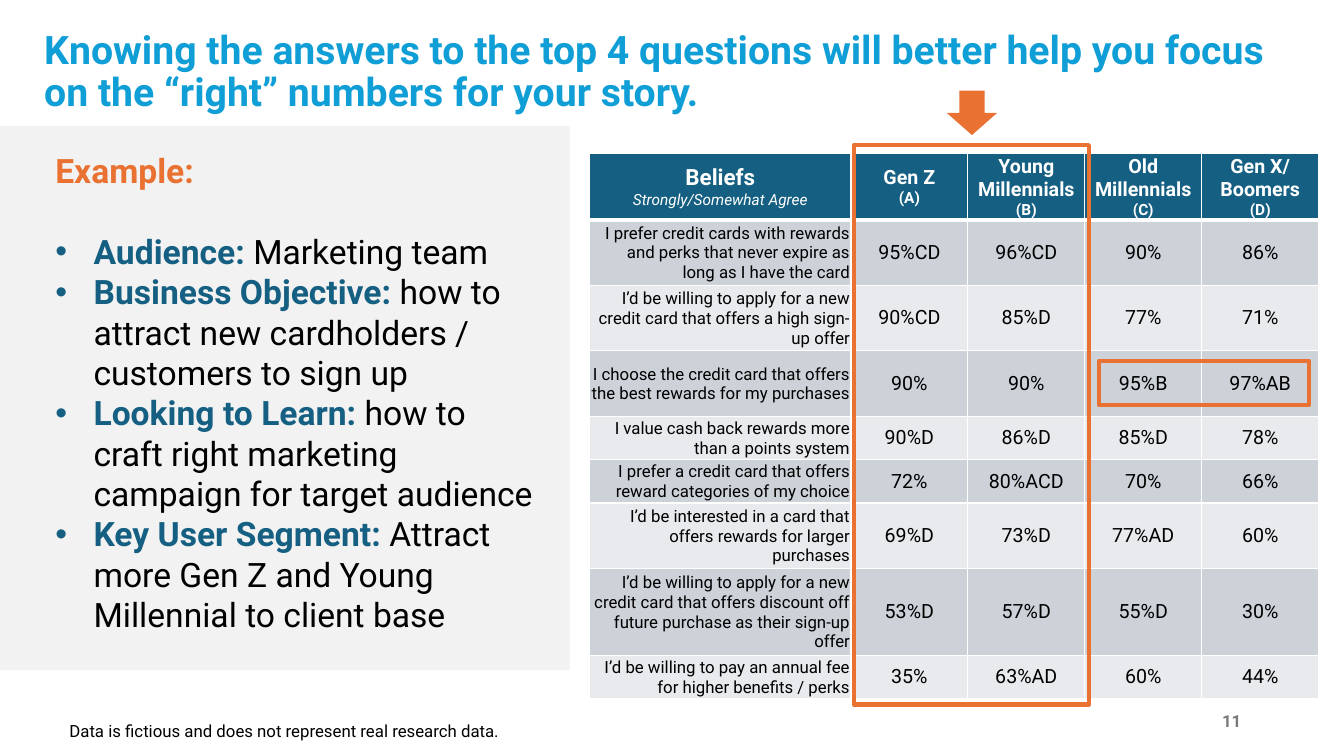
from lxml import etree
from pptx import Presentation
from pptx.dml.color import RGBColor
from pptx.enum.shapes import MSO_SHAPE as SHAPE
from pptx.enum.text import MSO_ANCHOR as ANCHOR, PP_ALIGN as ALIGN
from pptx.oxml.ns import qn
from pptx.util import Inches, Pt

FONT = "Roboto"
BLUE, ORANGE, BLACK, WHITE = "156082", "E97132", "000000", "FFFFFF"
BANDS = ("CCD2D8", "E8EAED")

TITLE = ("Knowing the answers to the top 4 questions will better help you "
         "focus on the “right” numbers for your story.")
FOOTNOTE = "Data is fictious and does not represent real research data."
PAGE = "11"
BRIEF = [
    ("Audience: ", "Marketing team"),
    ("Business Objective: ",
     "how to attract new cardholders / customers to sign up"),
    ("Looking to Learn: ",
     "how to craft right marketing campaign for target audience"),
    ("Key User Segment: ",
     "Attract more Gen Z and Young Millennial to client base"),
]
BELIEFS_HEAD = ("Beliefs", "Strongly/Somewhat Agree")
SEGMENTS = [("Gen Z", "(A)"), ("Young Millennials", "(B)"),
            ("Old Millennials", "(C)"), ("Gen X/ Boomers", "(D)")]
# row height, belief, share of each segment
BELIEFS = [
    (0.65, "I prefer credit cards with rewards and perks that never expire "
           "as long as I have the card", "95%CD", "96%CD", "90%", "86%"),
    (0.65, "I’d be willing to apply for a new credit card that offers a high "
           "sign-up offer", "90%CD", "85%D", "77%", "71%"),
    (0.65, "I choose the credit card that offers the best rewards for my "
           "purchases", "90%", "90%", "95%B", "97%AB"),
    (0.43, "I value cash back rewards more than a points system",
     "90%D", "86%D", "85%D", "78%"),
    (0.43, "I prefer a credit card that offers reward categories of my "
           "choice", "72%", "80%ACD", "70%", "66%"),
    (0.65, "I’d be interested in a card that offers rewards for larger "
           "purchases", "69%D", "73%D", "77%AD", "60%"),
    (0.86, "I’d be willing to apply for a new credit card that offers "
           "discount off future purchase as their sign-up offer",
     "53%D", "57%D", "55%D", "30%"),
    (0.43, "I’d be willing to pay an annual fee for higher benefits / perks",
     "35%", "63%AD", "60%", "44%"),
]
HEAD_HEIGHT = 0.65
COLUMNS = [2.59] + [1.16] * len(SEGMENTS)
HIGHLIGHTS = [(8.47, 1.44, 2.33, 5.55), (10.9, 3.58, 2.08, 0.44)]


def rgb(color):
    return RGBColor.from_string(color)


def add_run(p, text, size, color=BLACK, bold=False, italic=False):
    r = p.add_run()
    r.text = text
    f = r.font
    f.name, f.size, f.bold, f.italic = FONT, Pt(size), bold, italic
    f.color.rgb = rgb(color)


def add_text(s, box, anchor=ANCHOR.TOP):
    tf = s.shapes.add_textbox(*map(Inches, box)).text_frame
    tf.word_wrap = True
    tf.vertical_anchor = anchor
    return tf


def add_shape(s, kind, box, fill=None, line=None):
    sp = s.shapes.add_shape(kind, *map(Inches, box))
    sp.shadow.inherit = False
    if fill:
        sp.fill.solid()
        sp.fill.fore_color.rgb = rgb(fill)
    else:
        sp.fill.background()
    if line:
        sp.line.color.rgb = rgb(line)
        sp.line.width = Pt(3)
    else:
        sp.line.fill.background()


def add_bullet(p, color):
    pPr = p._p.get_or_add_pPr()
    pPr.set("marL", str(Inches(0.38)))
    pPr.set("indent", str(-Inches(0.38)))
    clr = etree.SubElement(pPr, qn("a:buClr"))
    etree.SubElement(clr, qn("a:srgbClr"), val=color)
    etree.SubElement(pPr, qn("a:buFont"), typeface="Arial")
    etree.SubElement(pPr, qn("a:buChar"), char="•")


def style_cell(cell, fill, margin, bottom=1):
    """Set borders, fill and margins; borders precede the fill in the XML."""
    tcPr = cell._tc.get_or_add_tcPr()
    for side, width in (("L", 1), ("R", 1), ("T", 1), ("B", bottom)):
        ln = etree.SubElement(tcPr, qn("a:ln" + side), w=str(Pt(width)))
        solid = etree.SubElement(ln, qn("a:solidFill"))
        etree.SubElement(solid, qn("a:srgbClr"), val=WHITE)
    cell.fill.solid()
    cell.fill.fore_color.rgb = rgb(fill)
    cell.vertical_anchor = ANCHOR.MIDDLE
    cell.margin_left = cell.margin_right = cell.margin_top = Inches(margin)
    cell.margin_bottom = 0


def add_beliefs_table(s):
    heights = [HEAD_HEIGHT] + [row[0] for row in BELIEFS]
    table = s.shapes.add_table(
        len(heights), len(COLUMNS), Inches(5.85), Inches(1.52),
        Inches(sum(COLUMNS)), Inches(sum(heights))).table
    for column, width in zip(table.columns, COLUMNS):
        column.width = Inches(width)
    for row, height in zip(table.rows, heights):
        row.height = Inches(height)

    for j, (name, detail) in enumerate([BELIEFS_HEAD] + SEGMENTS):
        cell = table.cell(0, j)
        style_cell(cell, BLUE, 0.01, bottom=3)
        first = j == 0
        p = cell.text_frame.paragraphs[0]
        p.alignment = ALIGN.CENTER
        add_run(p, name, 16 if first else 14, WHITE, bold=True)
        p = cell.text_frame.add_paragraph()
        p.alignment = ALIGN.CENTER
        add_run(p, detail, 11, WHITE, bold=not first, italic=first)

    for i, (_, *texts) in enumerate(BELIEFS):
        for j, text in enumerate(texts):
            cell = table.cell(i + 1, j)
            style_cell(cell, BANDS[i % 2], 0 if j else 0.01)
            p = cell.text_frame.paragraphs[0]
            p.alignment = ALIGN.CENTER if j else ALIGN.RIGHT
            add_run(p, text, 14 if j else 12)


def main():
    prs = Presentation()
    prs.slide_width, prs.slide_height = Inches(13.33), Inches(7.5)
    s = prs.slides.add_slide(prs.slide_layouts[6])

    p = add_text(s, (0.34, 0.32, 12.31, 0.8), ANCHOR.MIDDLE).paragraphs[0]
    p.line_spacing = 0.9
    add_run(p, TITLE, 28, "0F9ED5", bold=True)

    p = add_text(s, (11.84, 6.95, 0.57, 0.4), ANCHOR.MIDDLE).paragraphs[0]
    p.alignment = ALIGN.RIGHT
    add_run(p, PAGE, 12, "797979", bold=True)

    add_beliefs_table(s)
    add_run(add_text(s, (0.59, 7.1, 4.7, 0.3)).paragraphs[0], FOOTNOTE, 12)

    add_shape(s, SHAPE.RECTANGLE, (0, 1.25, 5.65, 5.4), fill="F2F2F2")
    tf = add_text(s, (0.45, 1.44, 5.03, 4.95))
    add_run(tf.paragraphs[0], "Example:", 24, ORANGE, bold=True)
    for i, (label, text) in enumerate(BRIEF):
        p = tf.add_paragraph()
        if i == 0:
            p.space_before = Pt(29)
        add_bullet(p, BLUE)
        add_run(p, label, 24, BLUE, bold=True)
        add_run(p, text, 24)

    for box in HIGHLIGHTS:
        add_shape(s, SHAPE.RECTANGLE, box, line=ORANGE)
    add_shape(s, SHAPE.DOWN_ARROW, (9.39, 0.9, 0.5, 0.44), fill=ORANGE)

    prs.save("out.pptx")


if __name__ == "__main__":
    main()
